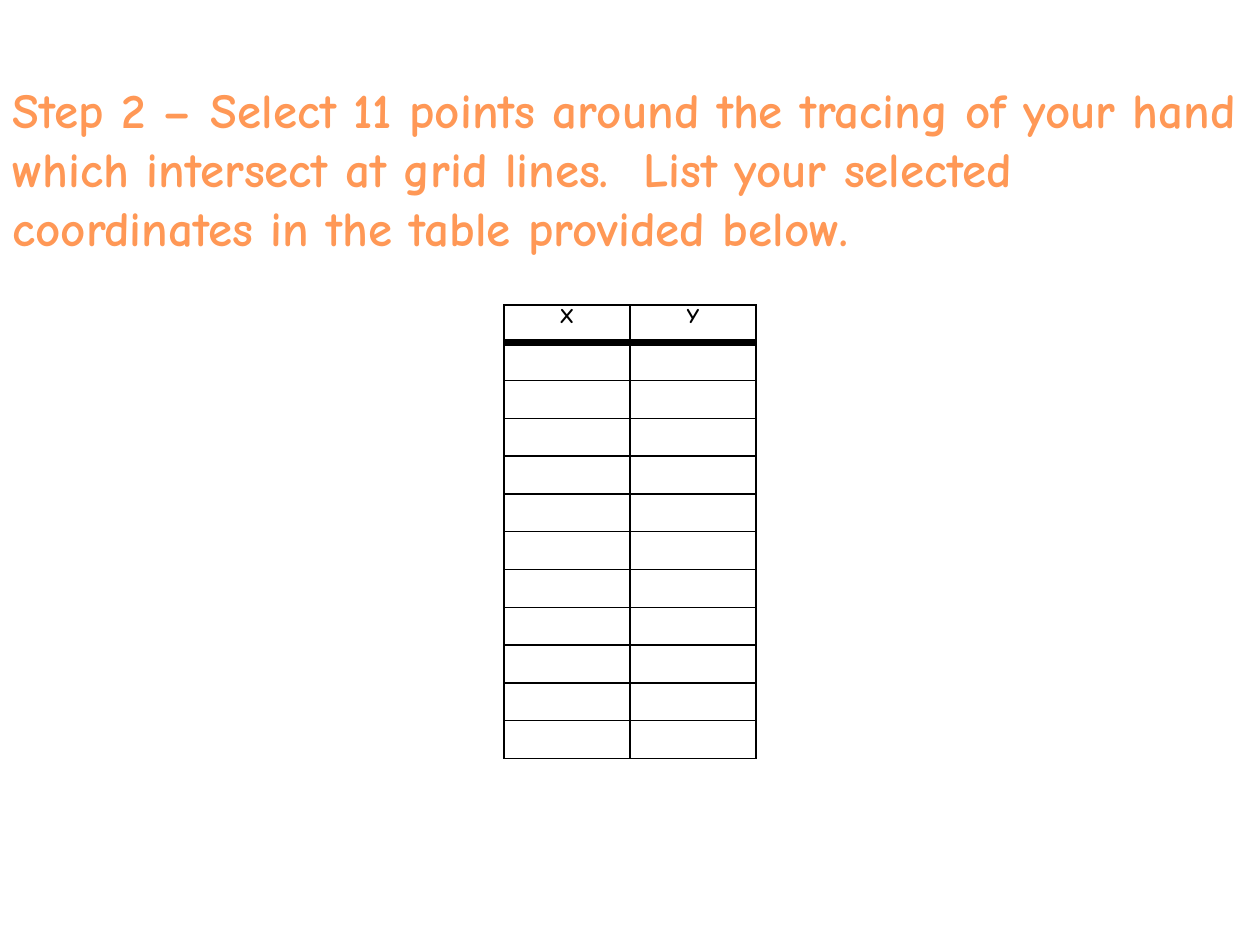
"""Build a slide asking for eleven hand-tracing coordinates in an X/Y table."""
from dataclasses import dataclass

from lxml import etree
from pptx import Presentation
from pptx.dml.color import RGBColor
from pptx.enum.text import MSO_ANCHOR, MSO_AUTO_SIZE, PP_ALIGN
from pptx.oxml.ns import qn
from pptx.util import Inches, Pt

TOP = MSO_ANCHOR.TOP
NO_AUTOFIT = MSO_AUTO_SIZE.NONE
LEFT = PP_ALIGN.LEFT
CENTER = PP_ALIGN.CENTER
TITLE_ONLY_LAYOUT = 5


@dataclass(frozen=True)
class Theme:
    font: str = "Comic Neue"
    title_color: str = "FF9856"
    table_color: str = "000000"
    title_size: float = 28
    table_size: float = 12
    thin_border: float = 1
    header_border: float = 4.5


theme = Theme()


def add_text(paragraph, text, size, color):
    run = paragraph.add_run()
    run.text = text
    run.font.name = theme.font
    run.font.size = Pt(size)
    run.font.bold = True
    run.font.color.rgb = RGBColor.from_string(color)


def add_border(cell, side, width):
    properties = cell._tc.get_or_add_tcPr()
    line = etree.SubElement(properties, qn(f"a:ln{side}"), w=str(Pt(width)))
    fill = etree.SubElement(line, qn("a:solidFill"))
    etree.SubElement(fill, qn("a:srgbClr"), val=theme.table_color)


presentation = Presentation()
presentation.slide_width = Inches(10)
presentation.slide_height = Inches(7.5)
slide = presentation.slides.add_slide(presentation.slide_layouts[TITLE_ONLY_LAYOUT])

headers = ["X", "Y"]
point_count = 11
row_count = point_count + 1
column_width = 1
row_height = 0.3
table_shape = slide.shapes.add_table(
    row_count, len(headers), Inches(4), Inches(2.42),
    Inches(column_width * len(headers)), Inches(row_height * row_count),
)
table = table_shape.table
table.first_row = False
table.horz_banding = False
for column in table.columns:
    column.width = Inches(column_width)

for row_index, row in enumerate(table.rows):
    row.height = Inches(row_height)
    top_width = theme.header_border if row_index == 1 else theme.thin_border
    bottom_width = theme.header_border if row_index == 0 else theme.thin_border
    for header, cell in zip(headers, row.cells):
        cell.margin_left = cell.margin_right = Inches(0.07)
        cell.margin_top = cell.margin_bottom = Inches(0)
        add_border(cell, "L", theme.thin_border)
        add_border(cell, "R", theme.thin_border)
        add_border(cell, "T", top_width)
        add_border(cell, "B", bottom_width)
        cell.fill.background()
        paragraph = cell.text_frame.paragraphs[0]
        paragraph.alignment = CENTER
        if row_index == 0:
            add_text(paragraph, header, theme.table_size, theme.table_color)
        else:
            etree.SubElement(paragraph._p, qn("a:endParaRPr"), sz=str(int(theme.table_size * 100)))

title = slide.shapes.title
title.left, title.top = Inches(0), Inches(0.58)
title.width, title.height = Inches(10), Inches(4.34)
title_frame = title.text_frame
title_frame.word_wrap = True
title_frame.auto_size = NO_AUTOFIT
title_frame.vertical_anchor = TOP
title_paragraph = title_frame.paragraphs[0]
title_paragraph.alignment = LEFT
add_text(
    title_paragraph,
    "Step 2 – Select 11 points around the tracing of your hand which intersect "
    "at grid lines.  List your selected coordinates in the table provided below.",
    theme.title_size, theme.title_color,
)

presentation.save("out.pptx")
